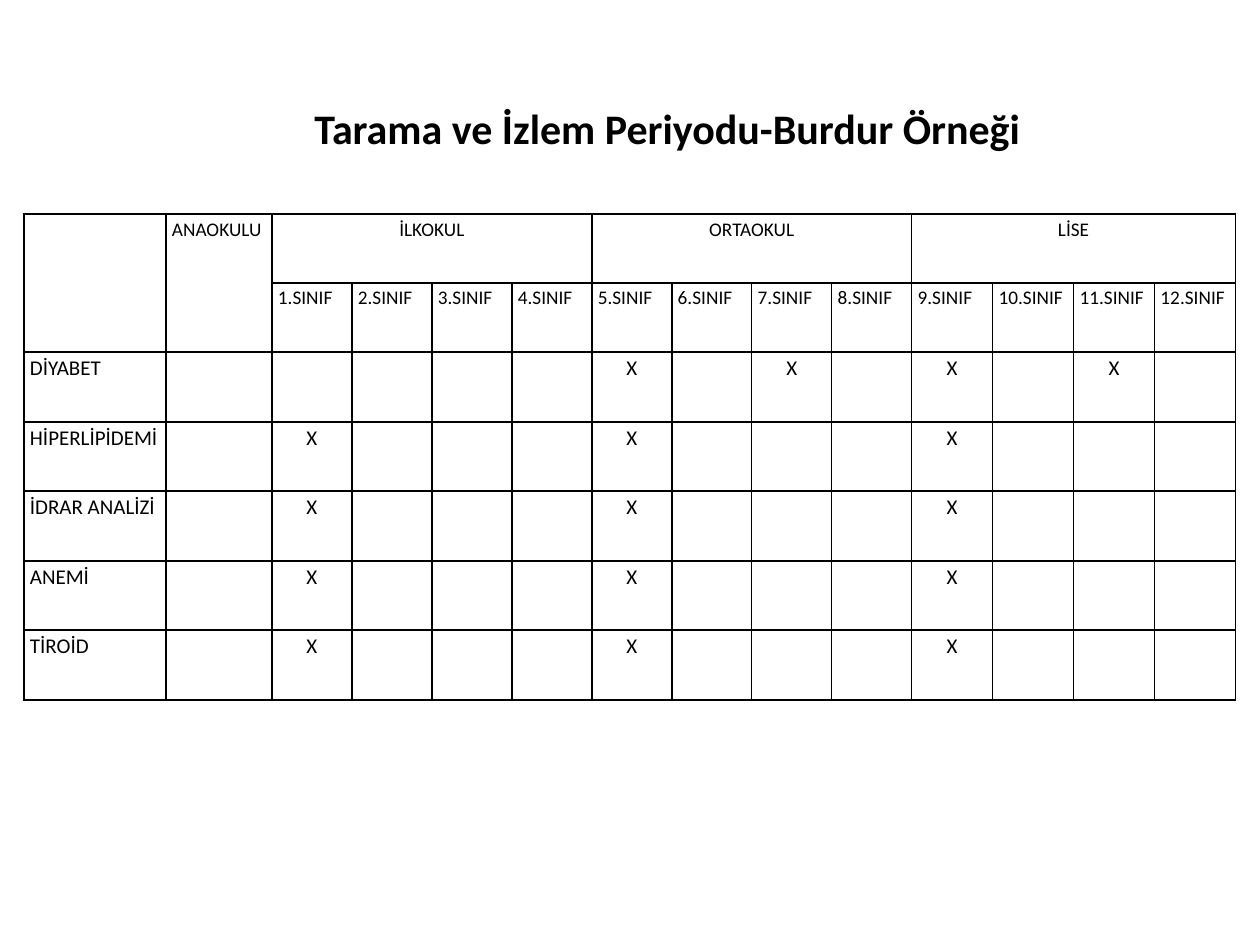
"""Build the school screening schedule slide."""
import dataclasses
import typing

import lxml.etree
import pptx
import pptx.dml.color
import pptx.enum.text
import pptx.oxml.ns
import pptx.util

PX = pptx.util.Inches(1) // 126
ALIGN = pptx.enum.text.PP_ALIGN


@dataclasses.dataclass(frozen=True)
class Theme:
    font: str = "Calibri"
    ink: str = "000000"
    title_size: int = 24
    header_size: int = 11
    body_size: int = 12
    border_width: int = 1
    line_spacing: float = 1.15


class Box(typing.NamedTuple):
    left: int
    top: int
    width: int
    height: int

    def emu(self) -> list[int]:
        return [value * PX for value in self]


class School(typing.NamedTuple):
    name: str
    first_grade: int
    last_grade: int


class Screening(typing.NamedTuple):
    name: str
    grades: tuple[int, ...]


THEME = Theme()
TITLE = "Tarama ve İzlem Periyodu-Burdur Örneği"
TITLE_BOX = Box(302, 96, 738, 63)
TABLE_BOX = Box(24, 214, 1212, 486)
COLUMN_WIDTHS = [142, 106] + [80] * 8 + [81] * 4
FIRST_GRADE_COLUMN = 2
HEADER_ROWS = 2
SCHOOLS = [School("İLKOKUL", 1, 4), School("ORTAOKUL", 5, 8), School("LİSE", 9, 12)]
SCREENINGS = [
    Screening("DİYABET", (5, 7, 9, 11)),
    Screening("HİPERLİPİDEMİ", (1, 5, 9)),
    Screening("İDRAR ANALİZİ", (1, 5, 9)),
    Screening("ANEMİ", (1, 5, 9)),
    Screening("TİROİD", (1, 5, 9)),
]


def apply_format(target: typing.Any, values: dict[str, typing.Any]) -> None:
    for name, value in values.items():
        setattr(target, name, value)


def write_text(paragraph, text: str, size: int, bold: bool = False) -> None:
    run = paragraph.add_run()
    run.text = text
    apply_format(run.font, {"name": THEME.font, "size": pptx.util.Pt(size), "bold": bold})
    run.font.color.rgb = pptx.dml.color.RGBColor.from_string(THEME.ink)


def write_cell(cell, text: str, size: int, alignment=ALIGN.LEFT) -> None:
    paragraph = cell.text_frame.paragraphs[0]
    apply_format(paragraph, {"alignment": alignment, "line_spacing": THEME.line_spacing})
    write_text(paragraph, text, size)


def style_cell(cell) -> None:
    apply_format(cell, {
        "margin_left": 6 * PX, "margin_right": 6 * PX, "margin_top": 0, "margin_bottom": 0,
    })
    qualified = pptx.oxml.ns.qn
    properties = cell._tc.get_or_add_tcPr()
    for side in ("lnL", "lnR", "lnT", "lnB"):
        line = lxml.etree.SubElement(
            properties, qualified(f"a:{side}"), w=str(pptx.util.Pt(THEME.border_width)))
        fill = lxml.etree.SubElement(line, qualified("a:solidFill"))
        lxml.etree.SubElement(fill, qualified("a:srgbClr"), val=THEME.ink)
    cell.fill.background()


def grade_column(grade: int) -> int:
    return FIRST_GRADE_COLUMN + grade - 1


def fill_header(table) -> None:
    for column in range(FIRST_GRADE_COLUMN):
        table.cell(0, column).merge(table.cell(HEADER_ROWS - 1, column))
    write_cell(table.cell(0, 1), "ANAOKULU", THEME.header_size)
    for school in SCHOOLS:
        first = table.cell(0, grade_column(school.first_grade))
        first.merge(table.cell(0, grade_column(school.last_grade)))
        write_cell(first, school.name, THEME.header_size, ALIGN.CENTER)
        for grade in range(school.first_grade, school.last_grade + 1):
            write_cell(table.cell(1, grade_column(grade)), f"{grade}.SINIF", THEME.header_size)


def fill_body(table) -> None:
    for row, screening in enumerate(SCREENINGS, HEADER_ROWS):
        write_cell(table.cell(row, 0), screening.name, THEME.body_size)
        for grade in screening.grades:
            write_cell(table.cell(row, grade_column(grade)), "X", THEME.body_size, ALIGN.CENTER)


def draw_table(slide) -> None:
    row_count = HEADER_ROWS + len(SCREENINGS)
    table = slide.shapes.add_table(row_count, len(COLUMN_WIDTHS), *TABLE_BOX.emu()).table
    apply_format(table, {"first_row": False, "horz_banding": False})
    for column, width in zip(table.columns, COLUMN_WIDTHS):
        column.width = width * PX
    edges = [TABLE_BOX.height * index // row_count for index in range(row_count + 1)]
    for row, top, bottom in zip(table.rows, edges, edges[1:]):
        row.height = (bottom - top) * PX
    for cell in table.iter_cells():
        style_cell(cell)
    fill_header(table)
    fill_body(table)


def draw_title(slide) -> None:
    frame = slide.shapes.add_textbox(*TITLE_BOX.emu()).text_frame
    apply_format(frame, {
        "word_wrap": False, "auto_size": pptx.enum.text.MSO_AUTO_SIZE.SHAPE_TO_FIT_TEXT,
    })
    write_text(frame.paragraphs[0], TITLE, THEME.title_size, bold=True)


def main() -> None:
    presentation = pptx.Presentation()
    apply_format(presentation, {"slide_width": 1260 * PX, "slide_height": 945 * PX})
    slide = presentation.slides.add_slide(presentation.slide_layouts[6])
    draw_table(slide)
    draw_title(slide)
    presentation.save("out.pptx")


if __name__ == "__main__":
    main()
